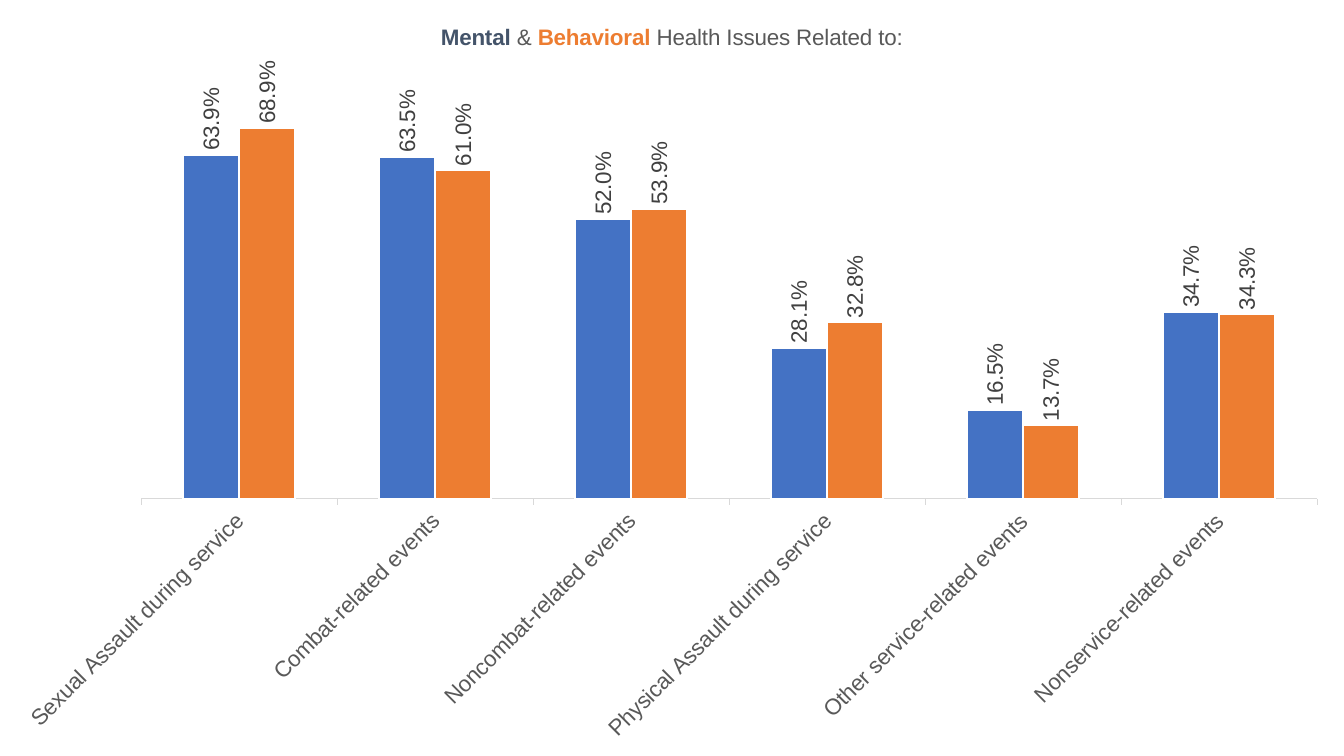
import pptx
import pptx.chart.data
import pptx.dml.color
import pptx.enum.chart
import pptx.oxml
import pptx.oxml.ns
import pptx.util

HUES = {"back": "000000", "white": "FFFFFF", "navy": "44546A", "blue": "4472C4",
        "orange": "ED7D31", "gray": "595959", "dark": "404040", "rule": "D9D9D9"}
CAUSES = ["Sexual Assault during service", "Combat-related events",
          "Noncombat-related events", "Physical Assault during service",
          "Other service-related events", "Nonservice-related events"]
RATES = [("Series 1", "blue", [0.639, 0.635, 0.52, 0.281, 0.165, 0.347]),
         ("Series 2", "orange", [0.689, 0.61, 0.539, 0.328, 0.137, 0.343])]
TITLE = [("Mental", "navy", True), (" & ", "gray", False),
         ("Behavioral", "orange", True),
         (" Health Issues Related to:", "gray", False)]


def tint(name):
    return pptx.dml.color.RGBColor.from_string(HUES[name])


def style(font, size=16, hue="gray", bold=False, face="Arial"):
    font.size, font.bold, font.name = pptx.util.Pt(size), bold, face
    font.color.rgb = tint(hue)


def write(para, text, **look):
    run = para.add_run()
    run.text = text
    style(run.font, **look)


def turn(part, angle):
    """Rotate the text of an axis or a set of labels, in degrees."""
    body = part._element.find(".//" + pptx.oxml.ns.qn("a:bodyPr"))
    body.set("rot", str(angle * 60000))
    body.set("vert", "horz")


class Deck:
    def __init__(self, wide, high):
        self.show = pptx.Presentation()
        self.show.slide_width = pptx.util.Inches(wide)
        self.show.slide_height = pptx.util.Inches(high)
        self.page = self.show.slides.add_slide(self.show.slide_layouts[6])
        fill = self.page.background.fill
        fill.solid()
        fill.fore_color.rgb = tint("back")

    def chart(self, x, y, w, h):
        """Add the column chart; place and size are shares of the slide."""
        data = pptx.chart.data.CategoryChartData(number_format="0.0%")
        data.categories = CAUSES
        for name, _, vals in RATES:
            data.add_series(name, vals)
        wide, high = self.show.slide_width, self.show.slide_height
        chart = self.page.shapes.add_chart(
            pptx.enum.chart.XL_CHART_TYPE.COLUMN_CLUSTERED,
            int(x * wide), int(y * high), int(w * wide), int(h * high), data).chart
        chart.has_legend = False
        style(chart.font, size=10, hue="back")
        return chart

    def paint(self, chart, hue):
        """Fill the chart area."""
        chart._chartSpace.find(pptx.oxml.ns.qn("c:chart")).addnext(
            pptx.oxml.parse_xml(
                f'<c:spPr {pptx.oxml.ns.nsdecls("c", "a")}><a:solidFill>'
                f'<a:srgbClr val="{HUES[hue]}"/></a:solidFill>'
                '<a:ln><a:noFill/></a:ln></c:spPr>'))

    def frame(self, chart, **share):
        """Fix the inner plot area, as shares of the chart."""
        area = chart._chartSpace.find(".//" + pptx.oxml.ns.qn("c:plotArea"))
        for old in area.findall(pptx.oxml.ns.qn("c:layout")):
            area.remove(old)
        modes = '<c:xMode val="edge"/><c:yMode val="edge"/>'
        sizes = "".join(f'<c:{key} val="{val}"/>' for key, val in share.items())
        area.insert(0, pptx.oxml.parse_xml(
            f'<c:layout {pptx.oxml.ns.nsdecls("c")}><c:manualLayout>'
            f'<c:layoutTarget val="inner"/>{modes}{sizes}'
            '</c:manualLayout></c:layout>'))

    def title(self, chart, parts):
        chart.has_title = True
        chart.chart_title.include_in_layout = False
        para = chart.chart_title.text_frame.paragraphs[0]
        for text, hue, bold in parts:
            write(para, text, hue=hue, bold=bold)

    def axes(self, chart):
        marks = pptx.enum.chart.XL_TICK_MARK
        base, scale = chart.category_axis, chart.value_axis
        base.major_tick_mark, base.minor_tick_mark = marks.OUTSIDE, marks.NONE
        base.format.line.color.rgb = tint("rule")
        base.format.line.width = pptx.util.Pt(0.75)
        style(base.tick_labels.font)
        turn(base, -45)
        scale.minimum_scale, scale.maximum_scale = 0, 0.8
        scale.has_major_gridlines = scale.visible = False

    def bars(self, chart):
        plot = chart.plots[0]
        plot.gap_width, plot.overlap, plot.vary_by_categories = 150, 0, False
        for bar, (_, hue, _) in zip(plot.series, RATES):
            bar.format.fill.solid()
            bar.format.fill.fore_color.rgb = tint(hue)
            bar.format.line.color.rgb = tint("white")
            bar.format.line.width = pptx.util.Pt(1.5)
            tags = bar.data_labels
            tags.show_value = True
            tags.number_format, tags.number_format_is_linked = "0.0%", False
            tags.position = pptx.enum.chart.XL_LABEL_POSITION.OUTSIDE_END
            style(tags.font, hue="dark")
            turn(tags, -90)


def main():
    deck = Deck(13.33, 7.5)
    # Chart over the whole slide
    chart = deck.chart(0, 0, 1, 1)
    deck.paint(chart, "white")
    deck.frame(chart, x=0.105, y=0.09, w=0.875, h=0.57)
    # Title, axes and columns
    deck.title(chart, TITLE)
    deck.axes(chart)
    deck.bars(chart)
    deck.show.save("out.pptx")


if __name__ == "__main__":
    main()
